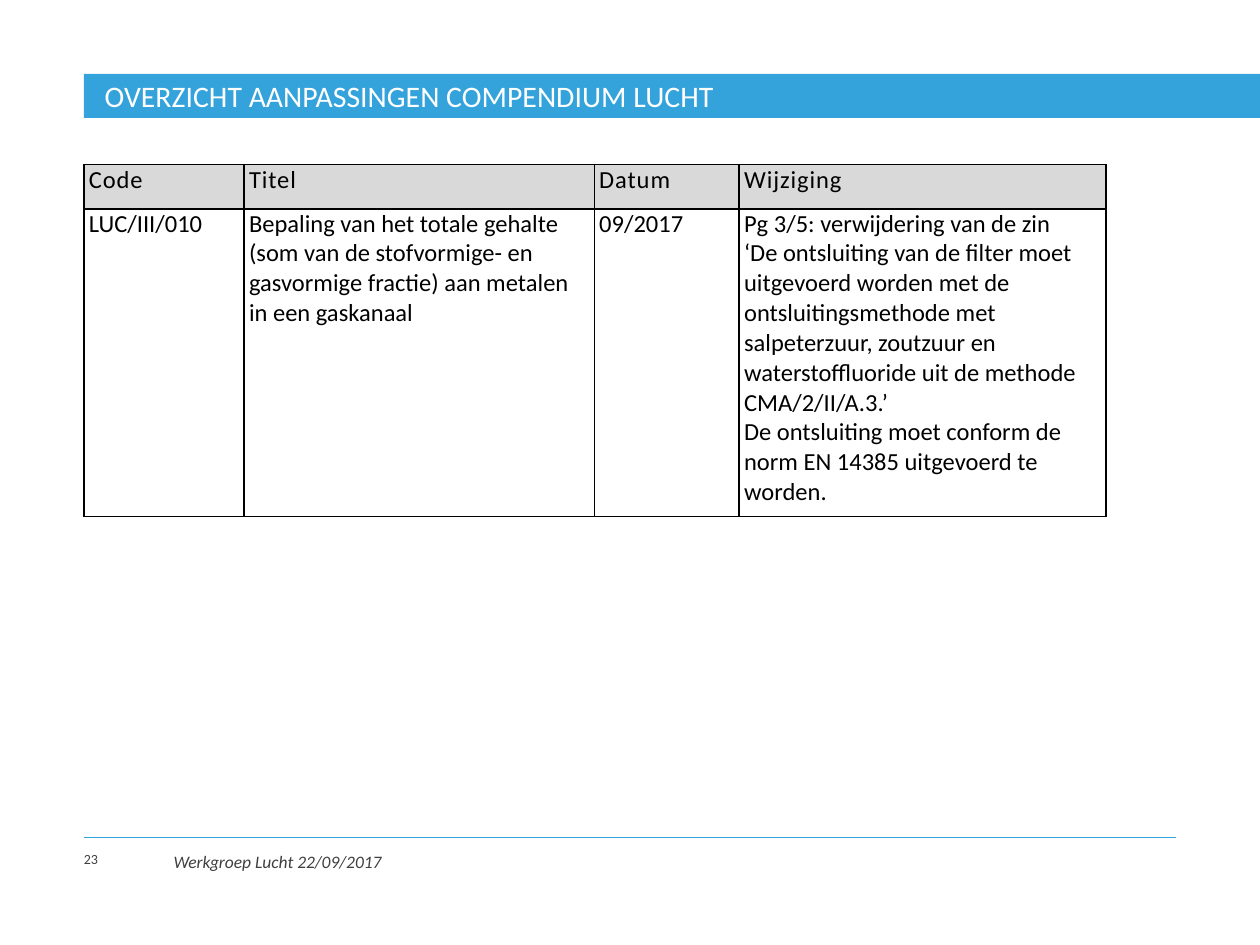
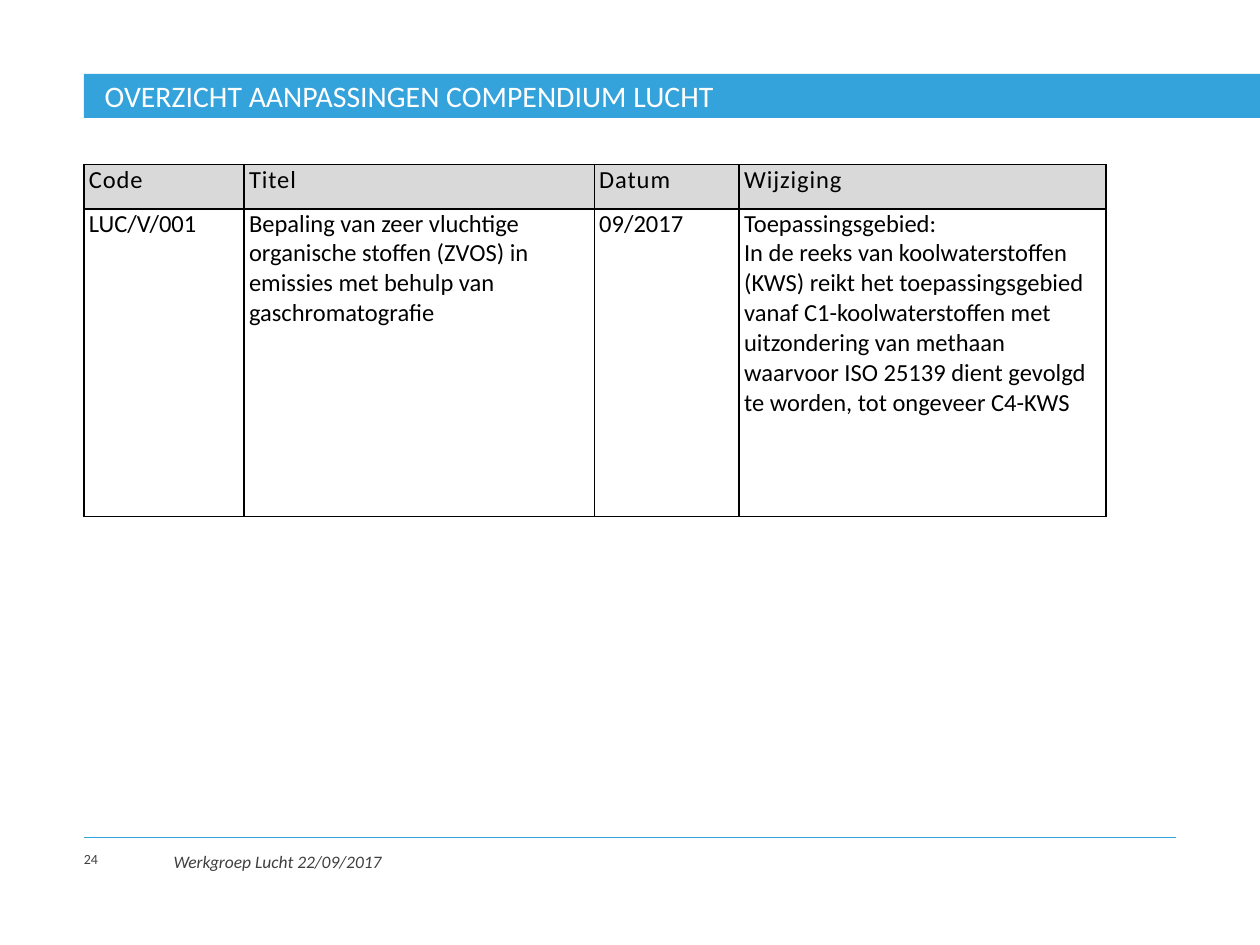
from lxml import etree
from pptx import Presentation
from pptx.dml.color import RGBColor
from pptx.enum.shapes import MSO_CONNECTOR, MSO_SHAPE
from pptx.enum.text import MSO_ANCHOR, MSO_AUTO_SIZE, PP_ALIGN
from pptx.oxml.ns import qn
from pptx.util import Cm, Pt

STRAIGHT = MSO_CONNECTOR.STRAIGHT
RECTANGLE = MSO_SHAPE.RECTANGLE
TOP, MIDDLE = MSO_ANCHOR.TOP, MSO_ANCHOR.MIDDLE
NO_AUTOFIT = MSO_AUTO_SIZE.NONE
LEFT = PP_ALIGN.LEFT

BLUE = RGBColor(0x34, 0xA3, 0xDC)
WHITE = RGBColor(0xFF, 0xFF, 0xFF)
BLACK = RGBColor(0x00, 0x00, 0x00)
DARK_GREY = RGBColor(0x40, 0x40, 0x40)
HEADER_GREY = RGBColor(0xD9, 0xD9, 0xD9)

FONT = "Calibri"
SLIDE_WIDTH, SLIDE_HEIGHT = Cm(25.4), Cm(19.05)
MARGIN = Cm(1.69)
BAND_TOP, BAND_HEIGHT = Cm(1.49), Cm(0.89)
FOOTER_LINE_TOP = Cm(16.89)
FOOTER_TOP, FOOTER_HEIGHT = Cm(17.15), Cm(1.02)
TABLE_TOP = Cm(3.32)
COLUMN_WIDTHS = [Cm(3.23), Cm(7.06), Cm(2.92), Cm(7.4)]
ROW_HEIGHTS = [Cm(0.89), Cm(6.2)]
CELL_MARGIN = Cm(0.1)

TITLE = "OVERZICHT AANPASSINGEN COMPENDIUM LUCHT"
FOOTER = "Werkgroep Lucht 22/09/2017"
HEADERS = ["Code", "Titel", "Datum", "Wijziging"]
FIRST_PAGE = 23
CHANGES = [
    [
        "LUC/III/010",
        "Bepaling van het totale gehalte (som van de stofvormige- en "
        "gasvormige fractie) aan metalen in een gaskanaal",
        "09/2017",
        "Pg 3/5: verwijdering van de zin\n"
        "‘De ontsluiting van de filter moet uitgevoerd worden met de "
        "ontsluitingsmethode met salpeterzuur, zoutzuur en "
        "waterstoffluoride uit de methode CMA/2/II/A.3.’\n"
        "De ontsluiting moet conform de norm EN 14385 uitgevoerd te worden.",
    ],
    [
        "LUC/V/001",
        "Bepaling van zeer vluchtige organische stoffen (ZVOS) in "
        "emissies met behulp van gaschromatografie",
        "09/2017",
        "Toepassingsgebied:\n"
        "In de reeks van koolwaterstoffen (KWS) reikt het "
        "toepassingsgebied vanaf C1-koolwaterstoffen met uitzondering "
        "van methaan waarvoor ISO 25139 dient gevolgd te worden, tot "
        "ongeveer C4-KWS",
    ],
]


def write(frame, text, size, color, italic=False):
    """Fill a text frame and give all its runs one format."""
    frame.text = text
    for para in frame.paragraphs:
        para.alignment = LEFT
        for span in para.runs:
            span.font.name = FONT
            span.font.size = Pt(size)
            span.font.color.rgb = color
            span.font.italic = italic
            span.font.bold = False


def prepare_frame(frame, anchor):
    frame.word_wrap = True
    frame.auto_size = NO_AUTOFIT
    frame.vertical_anchor = anchor
    frame.margin_left = frame.margin_right = 0
    frame.margin_top = frame.margin_bottom = 0


def add_title_band(slide):
    band = slide.shapes.add_shape(
        RECTANGLE, MARGIN, BAND_TOP, SLIDE_WIDTH - MARGIN, BAND_HEIGHT)
    band.shadow.inherit = False
    band.fill.solid()
    band.fill.fore_color.rgb = BLUE
    band.line.fill.background()

    title = slide.shapes.title
    title.left, title.top = Cm(2.11), BAND_TOP
    title.width, title.height = Cm(22.4), BAND_HEIGHT
    prepare_frame(title.text_frame, MIDDLE)
    write(title.text_frame, TITLE, 17, WHITE)
    # The title lies in front of the band
    title.element.getparent().append(title.element)


def add_footer_text(slide, left, width, text, size, italic=False):
    box = slide.shapes.add_textbox(left, FOOTER_TOP, width, FOOTER_HEIGHT)
    prepare_frame(box.text_frame, TOP)
    write(box.text_frame, text, size, DARK_GREY, italic)


def add_footer(slide, page):
    line = slide.shapes.add_connector(
        STRAIGHT, MARGIN, FOOTER_LINE_TOP,
        SLIDE_WIDTH - MARGIN, FOOTER_LINE_TOP)
    line.line.color.rgb = BLUE
    line.line.width = Pt(0.5)
    etree.SubElement(line.element.spPr, qn("a:effectLst"))
    add_footer_text(slide, Cm(3.5), Cm(16.84), FOOTER, 10, italic=True)
    add_footer_text(slide, MARGIN, Cm(1.47), str(page), 8)


def add_borders(cell):
    properties = cell._tc.get_or_add_tcPr()
    for side in ("a:lnL", "a:lnR", "a:lnT", "a:lnB"):
        border = etree.SubElement(properties, qn(side), w=str(Pt(1)))
        fill = etree.SubElement(border, qn("a:solidFill"))
        etree.SubElement(fill, qn("a:srgbClr"), val=str(BLACK))


def format_cell(cell, text, is_header):
    cell.margin_left = cell.margin_right = CELL_MARGIN
    cell.margin_top = cell.margin_bottom = 0
    cell.vertical_anchor = TOP
    add_borders(cell)
    write(cell.text_frame, text, 14, BLACK)
    if is_header:
        cell.fill.solid()
        cell.fill.fore_color.rgb = HEADER_GREY
        span = cell.text_frame.paragraphs[0].runs[0]
        span.font._element.set("spc", "50")
    else:
        cell.fill.background()


def add_change_table(slide, change):
    rows = [HEADERS, change]
    table = slide.shapes.add_table(
        len(rows), len(HEADERS), MARGIN, TABLE_TOP,
        sum(COLUMN_WIDTHS), sum(ROW_HEIGHTS)).table
    table.first_row = table.horz_banding = False
    for column, width in zip(table.columns, COLUMN_WIDTHS):
        column.width = width
    for row, height, texts in zip(table.rows, ROW_HEIGHTS, rows):
        row.height = height
        for cell, text in zip(row.cells, texts):
            format_cell(cell, text, texts is HEADERS)


def main():
    deck = Presentation()
    deck.slide_width, deck.slide_height = SLIDE_WIDTH, SLIDE_HEIGHT
    title_only = deck.slide_layouts.get_by_name("Title Only")
    for page, change in enumerate(CHANGES, FIRST_PAGE):
        slide = deck.slides.add_slide(title_only)
        add_title_band(slide)
        add_footer(slide, page)
        add_change_table(slide, change)
    deck.save("out.pptx")


if __name__ == "__main__":
    main()
